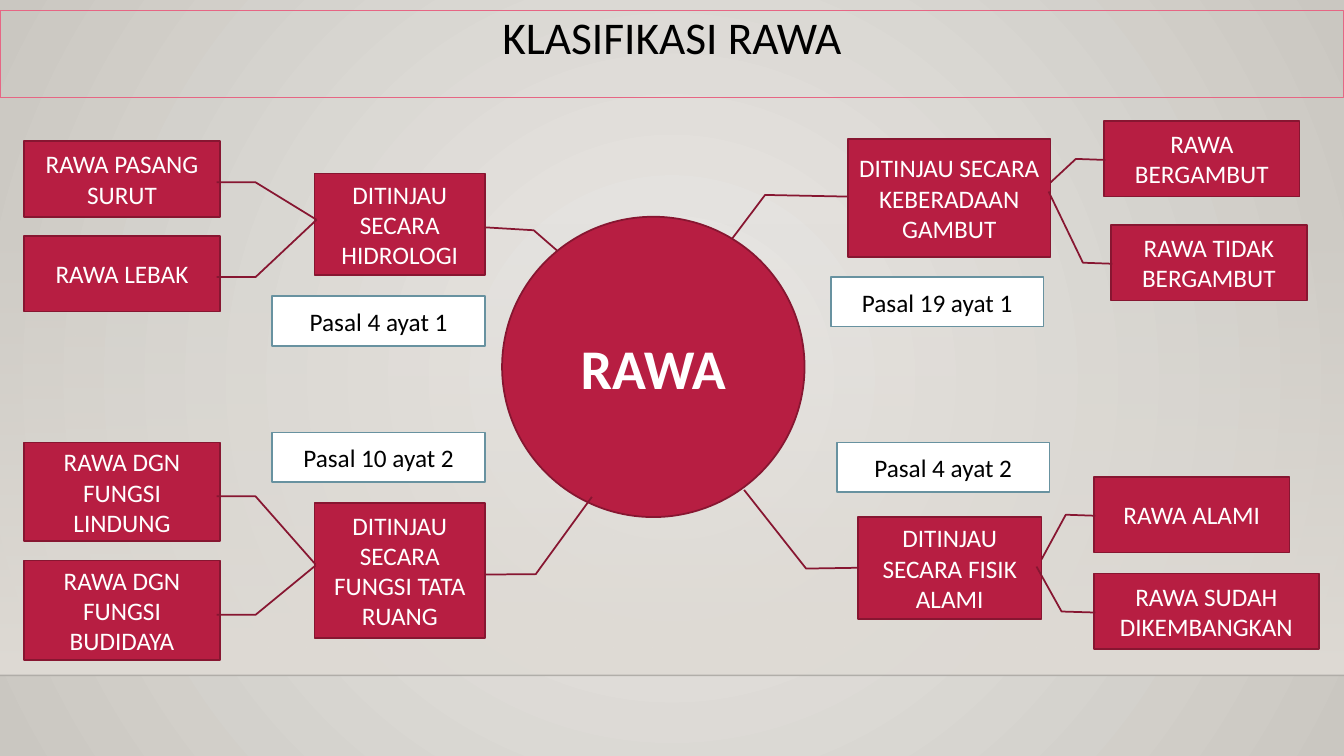
from dataclasses import dataclass

from lxml import etree
from pptx import Presentation
from pptx.dml.color import RGBColor
from pptx.enum.shapes import MSO_CONNECTOR, MSO_SHAPE
from pptx.enum.text import MSO_ANCHOR, MSO_AUTO_SIZE, PP_ALIGN
from pptx.oxml.ns import qn
from pptx.util import Inches, Pt

# Content: boxes are (left, top, width, height), tips are (x, y), in inches
TITLE = "KLASIFIKASI RAWA"
HUB = ("RAWA", (4.98, 2.15, 3, 2.98))

# Leader bends of a leaf: y and x of start and elbow, as fractions of its box
LEFT_LEAF = (0.545, 0.984, 0.545, 1.183)
RIGHT_LEAF = (0.516, 0.007, 0.502, -0.144)

# Each branch: text, box, leader bends, tip at the hub, article, leaf bends, leaves
BRANCHES = [
    ("DITINJAU SECARA HIDROLOGI", (3.12, 1.72, 1.69, 1.01),
     (0.53, 0.999, 0.559, 1.286), (5.53, 2.49),
     ("Pasal 4 ayat 1", (2.7, 2.94)), LEFT_LEAF,
     [("RAWA PASANG SURUT", (0.24, 1.4, 1.94, 0.75), (3.14, 2.18)),
      ("RAWA LEBAK", (0.24, 2.34, 1.94, 0.75), (3.14, 2.18))]),
    ("DITINJAU SECARA FUNGSI TATA RUANG", (3.12, 4.99, 1.69, 1.34),
     (0.53, 0.999, 0.527, 1.298), (5.87, 4.93),
     ("Pasal 10 ayat 2", (2.7, 4.29)), LEFT_LEAF,
     [("RAWA DGN FUNGSI LINDUNG", (0.24, 4.39, 1.94, 0.98), (3.13, 5.6)),
      ("RAWA DGN FUNGSI BUDIDAYA", (0.24, 5.56, 1.94, 0.99), (3.13, 5.61))]),
    ("DITINJAU SECARA KEBERADAAN GAMBUT", (8.41, 1.38, 2.01, 1.17),
     (0.488, -0.001, 0.474, -0.409), (7.26, 2.37),
     ("Pasal 19 ayat 1", (8.24, 2.75)), RIGHT_LEAF,
     [("RAWA BERGAMBUT", (10.95, 1.2, 1.94, 0.75), (10.42, 1.81)),
      ("RAWA TIDAK BERGAMBUT", (11.02, 2.23, 1.94, 0.75), (10.4, 1.9))]),
    ("DITINJAU SECARA FISIK ALAMI", (8.51, 5.13, 1.82, 1.01),
     (0.498, -0.001, 0.506, -0.283), (7.38, 4.86),
     ("Pasal 4 ayat 2", (8.3, 4.39)), RIGHT_LEAF,
     [("RAWA ALAMI", (10.85, 4.73, 1.94, 0.75), (10.33, 5.55)),
      ("RAWA SUDAH DIKEMBANGKAN", (10.85, 5.69, 2.23, 0.75), (10.28, 5.62))]),
]
ARTICLE_SIZE = (2.11, 0.49)
SLIDE_W, SLIDE_H = 13.33, 7.5
FLOOR_TOP, FLOOR_Y = 2.21, 6.7


@dataclass(frozen=True)
class Theme:
    font: str = "Calibri"
    title_pt: float = 32.4
    hub_pt: float = 40
    body_pt: float = 18
    border_pt: float = 1.25
    red: str = "B71E42"
    dark_red: str = "871631"
    pink: str = "E66684"
    steel: str = "6892A0"
    white: str = "FFFFFF"
    black: str = "000000"
    glow: str = "ECEAE7"
    edge: str = "CAC7C1"
    floor: str = "DFDBD5"


THEME = Theme()


def rgb(code):
    return RGBColor.from_string(code)


def set_gradient(fill, inner, outer):
    fill.gradient()
    for stop, code, position in zip(fill.gradient_stops, (inner, outer), (0, 1)):
        stop.color.rgb = rgb(code)
        stop.position = position


def set_alpha(element, percent):
    """Make the first colour of an element translucent."""
    colour = next(element.iter(qn("a:srgbClr")))
    etree.SubElement(colour, qn("a:alpha"), val=str(percent * 1000))


def format_text(frame, text, size, colour, bold=False, anchor=MSO_ANCHOR.MIDDLE):
    frame.word_wrap = True
    frame.vertical_anchor = anchor
    frame.text = text
    line = frame.paragraphs[0]
    line.alignment = PP_ALIGN.CENTER
    line.font.name, line.font.size, line.font.bold = THEME.font, Pt(size), bold
    line.font.color.rgb = rgb(colour)


def add_box(slide, kind, text, box, fill=THEME.red, border=THEME.dark_red,
            colour=THEME.white, size=THEME.body_pt, bold=False):
    shape = slide.shapes.add_shape(kind, *map(Inches, box))
    shape.shadow.inherit = False
    shape.fill.solid()
    shape.fill.fore_color.rgb = rgb(fill)
    shape.line.color.rgb = rgb(border)
    shape.line.width = Pt(THEME.border_pt)
    format_text(shape.text_frame, text, size, colour, bold)
    return shape


def add_callout(slide, text, box, bends, tip):
    """Box whose bent leader ends at the tip."""
    callout = add_box(slide, MSO_SHAPE.LINE_CALLOUT_2, text, box)
    left, top, width, height = box
    end = ((tip[1] - top) / height, (tip[0] - left) / width)
    for index, fraction in enumerate(bends + end):
        callout.adjustments[index] = fraction


def add_backdrop(slide):
    # Radial background
    set_gradient(slide.background.fill, THEME.glow, THEME.edge)
    linear = next(slide.element.iter(qn("a:lin")))
    radial = etree.Element(qn("a:path"), path="circle")
    etree.SubElement(radial, qn("a:fillToRect"), l="50000", t="50000",
                     r="50000", b="50000")
    linear.getparent().replace(linear, radial)

    # Floor fading in towards its lower edge
    floor = slide.shapes.add_shape(MSO_SHAPE.RECTANGLE, 0, Inches(FLOOR_TOP),
                                   Inches(SLIDE_W), Inches(FLOOR_Y - FLOOR_TOP))
    floor.shadow.inherit = False
    floor.line.fill.background()
    set_gradient(floor.fill, THEME.floor, THEME.floor)
    floor.fill.gradient_angle = 270
    set_alpha(floor.element, 0)

    rule = slide.shapes.add_connector(MSO_CONNECTOR.STRAIGHT, 0, Inches(FLOOR_Y),
                                      Inches(SLIDE_W), Inches(FLOOR_Y))
    rule.line.color.rgb = rgb(THEME.black)
    rule.line.width = Pt(1)
    set_alpha(rule.element, 20)
    etree.SubElement(rule.element.spPr, qn("a:effectLst"))


def add_title(slide):
    title = slide.shapes.title
    title.left, title.top, title.width, title.height = map(
        Inches, (0, 0.1, SLIDE_W, 0.87))
    title.line.color.rgb = rgb(THEME.pink)
    title.line.width = Pt(0.75)
    format_text(title.text_frame, TITLE, THEME.title_pt, THEME.black,
                anchor=MSO_ANCHOR.TOP)
    title.text_frame.auto_size = MSO_AUTO_SIZE.NONE
    title.text_frame.paragraphs[0].line_spacing = 0.9


def main():
    deck = Presentation()
    deck.slide_width, deck.slide_height = Inches(SLIDE_W), Inches(SLIDE_H)
    slide = deck.slides.add_slide(deck.slide_layouts[5])
    add_backdrop(slide)
    add_title(slide)

    # Hub, then each branch with its leaves and article
    add_box(slide, MSO_SHAPE.OVAL, *HUB, size=THEME.hub_pt, bold=True)
    for text, box, bends, tip, article, leaf_bends, leaves in BRANCHES:
        add_callout(slide, text, box, bends, tip)
        for leaf, leaf_box, leaf_tip in leaves:
            add_callout(slide, leaf, leaf_box, leaf_bends, leaf_tip)
        clause, corner = article
        add_box(slide, MSO_SHAPE.RECTANGLE, clause, corner + ARTICLE_SIZE,
                fill=THEME.white, border=THEME.steel, colour=THEME.black)

    deck.save("out.pptx")


if __name__ == "__main__":
    main()
